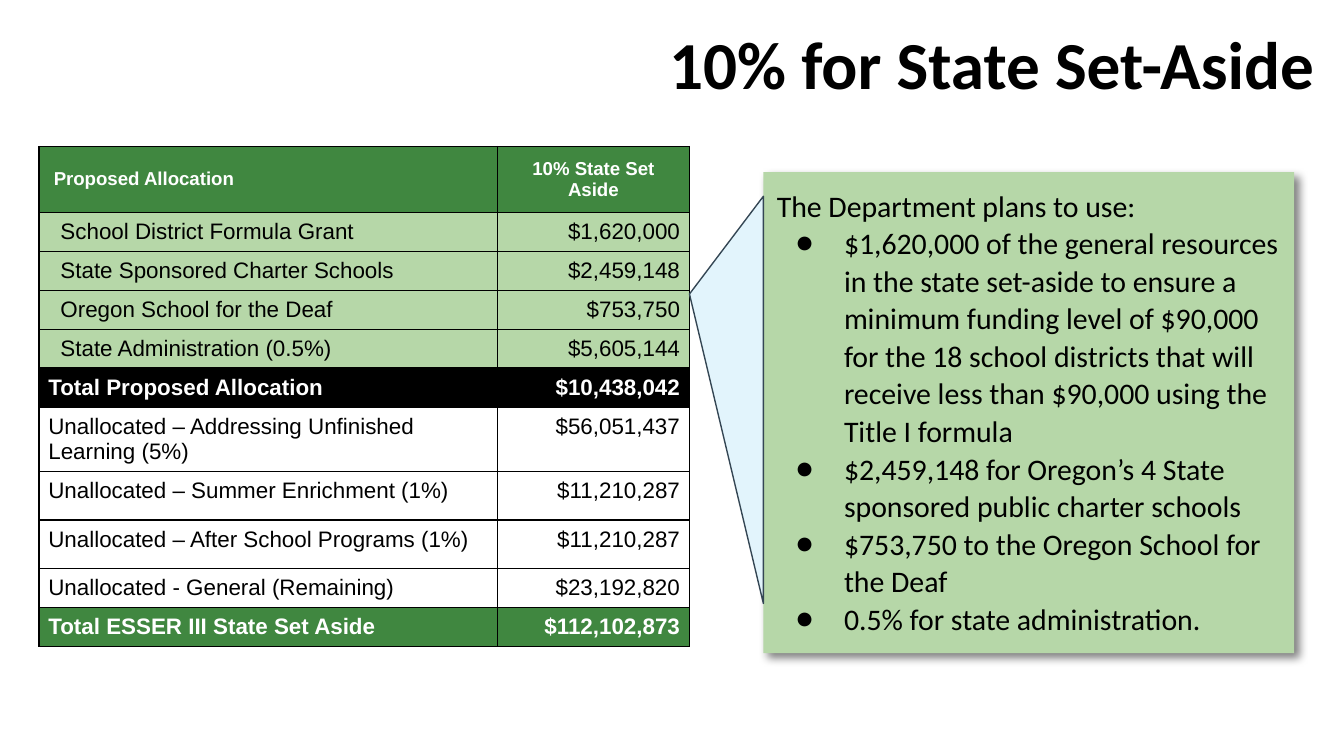
from lxml import etree
from pptx import Presentation
from pptx import util as u
from pptx.dml.color import RGBColor
from pptx.enum import shapes, text
from pptx.oxml import parse_xml
from pptx.oxml.ns import nsdecls, qn

GREEN, LIGHT_GREEN, BLACK, WHITE = "408740", "B6D7A8", "000000", "FFFFFF"
ALIGN = text.PP_ALIGN
ANCHOR = text.MSO_ANCHOR

# Label, amount, row height, fill, text colour, label indent, label alignment
HEADER = ("Proposed Allocation", "10% State Set Aside", 0.49, GREEN, WHITE, 0.04, ALIGN.JUSTIFY)


def allocation(label, amount):
    return label, amount, 0.29, LIGHT_GREEN, BLACK, 0.09, ALIGN.JUSTIFY


def total(label, amount, fill):
    return label, amount, 0.29, fill, WHITE, 0, ALIGN.JUSTIFY


def unallocated(label, amount, height, fill=WHITE):
    return label, amount, height, fill, BLACK, 0, ALIGN.LEFT


ROWS = [
    HEADER,
    allocation("School District Formula Grant", "$1,620,000"),
    allocation("State Sponsored Charter Schools", "$2,459,148"),
    allocation("Oregon School for the Deaf", "$753,750"),
    allocation("State Administration (0.5%)", "$5,605,144"),
    total("Total Proposed Allocation", "$10,438,042", BLACK),
    unallocated("Unallocated – Addressing Unfinished Learning (5%)", "$56,051,437", 0.48),
    unallocated("Unallocated – Summer Enrichment (1%)", "$11,210,287", 0.36),
    unallocated("Unallocated – After School Programs (1%)", "$11,210,287", 0.36),
    unallocated("Unallocated - General (Remaining)", "$23,192,820", 0.29, None),
    total("Total ESSER III State Set Aside", "$112,102,873", GREEN),
]

PLAN_INTRO = "The Department plans to use:"
PLAN_ITEMS = [
    "$1,620,000 of the general resources in the state set-aside to ensure a minimum "
    "funding level of $90,000 for the 18 school districts that will receive less than "
    "$90,000 using the Title I formula",
    "$2,459,148 for Oregon’s 4 State sponsored public charter schools",
    "$753,750 to the Oregon School for the Deaf",
    "0.5% for state administration.",
]


def color(value):
    return RGBColor.from_string(value)


def paint(target, value):
    if value is None:
        target.fill.background()
    else:
        target.fill.solid()
        target.fill.fore_color.rgb = color(value)


def place(box, left, top, width, height):
    box.left, box.top = u.Inches(left), u.Inches(top)
    box.width, box.height = u.Inches(width), u.Inches(height)


def style_runs(para, font, size, value, bold=False):
    for span in para.runs:
        span.font.name, span.font.size = font, u.Pt(size)
        span.font.bold = bold
        span.font.color.rgb = color(value)


def set_margins(target, left, top, right, bottom):
    target.margin_left, target.margin_top = u.Inches(left), u.Inches(top)
    target.margin_right, target.margin_bottom = u.Inches(right), u.Inches(bottom)


def add_title(slide):
    title = slide.shapes.title
    place(title, 2.06, 0.09, 7.82, 0.83)
    frame = title.text_frame
    frame.text = "10% for State Set-Aside"
    frame.vertical_anchor = ANCHOR.MIDDLE
    frame.auto_size = text.MSO_AUTO_SIZE.NONE
    set_margins(frame, 0.1, 0.05, 0.1, 0.05)
    para = frame.paragraphs[0]
    para.alignment, para.line_spacing = ALIGN.RIGHT, 0.9
    style_runs(para, "Calibri", 36, BLACK, True)


def set_borders(cell):
    properties = cell._tc.get_or_add_tcPr()
    for side in ("lnL", "lnR", "lnT", "lnB"):
        properties.append(parse_xml(
            f'<a:{side} {nsdecls("a")} w="{u.Pt(0.75)}"><a:solidFill>'
            f'<a:srgbClr val="{BLACK}"/></a:solidFill></a:{side}>'))


def fill_cell(cell, words, alignment, fill, ink, indent, header):
    cell.text = words
    cell.vertical_anchor = ANCHOR.MIDDLE if header else ANCHOR.TOP
    set_margins(cell, 0.07 + indent, 0.05, 0.07, 0.05)
    set_borders(cell)
    paint(cell, fill)
    para = cell.text_frame.paragraphs[0]
    para.alignment = alignment
    style_runs(para, "Arial", 10 if header else 12, ink, ink == WHITE)


def add_allocation_table(slide):
    height = sum(row[2] for row in ROWS)
    table = slide.shapes.add_table(len(ROWS), 2, u.Inches(0.29), u.Inches(1.09),
                                   u.Inches(4.84), u.Inches(height)).table
    table.first_row = table.horz_banding = False
    for column, width in zip(table.columns, (3.41, 1.43)):
        column.width = u.Inches(width)
    for index, (label, amount, height, fill, ink, indent, alignment) in enumerate(ROWS):
        header = index == 0
        table.rows[index].height = u.Inches(height)
        fill_cell(table.cell(index, 0), label, alignment, fill, ink, indent, header)
        fill_cell(table.cell(index, 1), amount, ALIGN.CENTER if header else ALIGN.RIGHT,
                  fill, ink, 0, header)


def set_bullet(para, bulleted):
    properties = para._p.get_or_add_pPr()
    properties.set("marL", str(u.Inches(0.5 if bulleted else 0)))
    properties.set("indent", str(u.Inches(-0.36 if bulleted else 0)))
    if not bulleted:
        etree.SubElement(properties, qn("a:buNone"))
        return
    bullet_color = etree.SubElement(properties, qn("a:buClr"))
    etree.SubElement(bullet_color, qn("a:srgbClr"), val=BLACK)
    etree.SubElement(properties, qn("a:buFont"), typeface="Calibri")
    etree.SubElement(properties, qn("a:buChar"), char="●")


def add_drop_shadow(box):
    box._element.spPr.append(parse_xml(
        f'<a:effectLst {nsdecls("a")}><a:outerShdw blurRad="{u.Pt(4.5)}" '
        f'dist="{u.Pt(3.75)}" dir="3000000" algn="bl" rotWithShape="0">'
        f'<a:srgbClr val="{BLACK}"><a:alpha val="50000"/></a:srgbClr>'
        '</a:outerShdw></a:effectLst>'))


def add_plan(slide):
    box = slide.placeholders[1]
    place(box, 5.68, 1.28, 3.95, 3.58)
    paint(box, LIGHT_GREEN)
    box.line.fill.background()
    add_drop_shadow(box)
    frame = box.text_frame
    frame.text = "\n".join([PLAN_INTRO, *PLAN_ITEMS])
    frame.word_wrap = True
    frame.auto_size = text.MSO_AUTO_SIZE.NONE
    frame.vertical_anchor = ANCHOR.TOP
    set_margins(frame, 0.1, 0.1, 0.1, 0.1)
    for index, para in enumerate(frame.paragraphs):
        set_bullet(para, index > 0)
        para.alignment = ALIGN.LEFT
        para.line_spacing, para.space_before = 1.05, u.Pt(0)
        style_runs(para, "Calibri", 16, BLACK)


def add_pointer(slide):
    pointer = slide.shapes.add_shape(shapes.MSO_SHAPE.ISOSCELES_TRIANGLE, u.Inches(3.89),
                                     u.Inches(2.7), u.Inches(3.03), u.Inches(0.55))
    pointer.rotation = 270
    pointer.adjustments[0] = 0.76
    pointer.shadow.inherit = False
    paint(pointer, "E2F4FC")
    pointer.line.color.rgb = color("344654")
    pointer.line.width = u.Pt(0.75)


def main():
    deck = Presentation()
    # Widescreen, 16 by 9
    deck.slide_width, deck.slide_height = u.Inches(10), u.Inches(10 * 9 / 16)
    slide = deck.slides.add_slide(deck.slide_layouts[1])
    add_title(slide)
    add_allocation_table(slide)
    # Plan for the allocated rows, with a pointer back to the table
    add_plan(slide)
    add_pointer(slide)
    deck.save("out.pptx")


if __name__ == "__main__":
    main()
